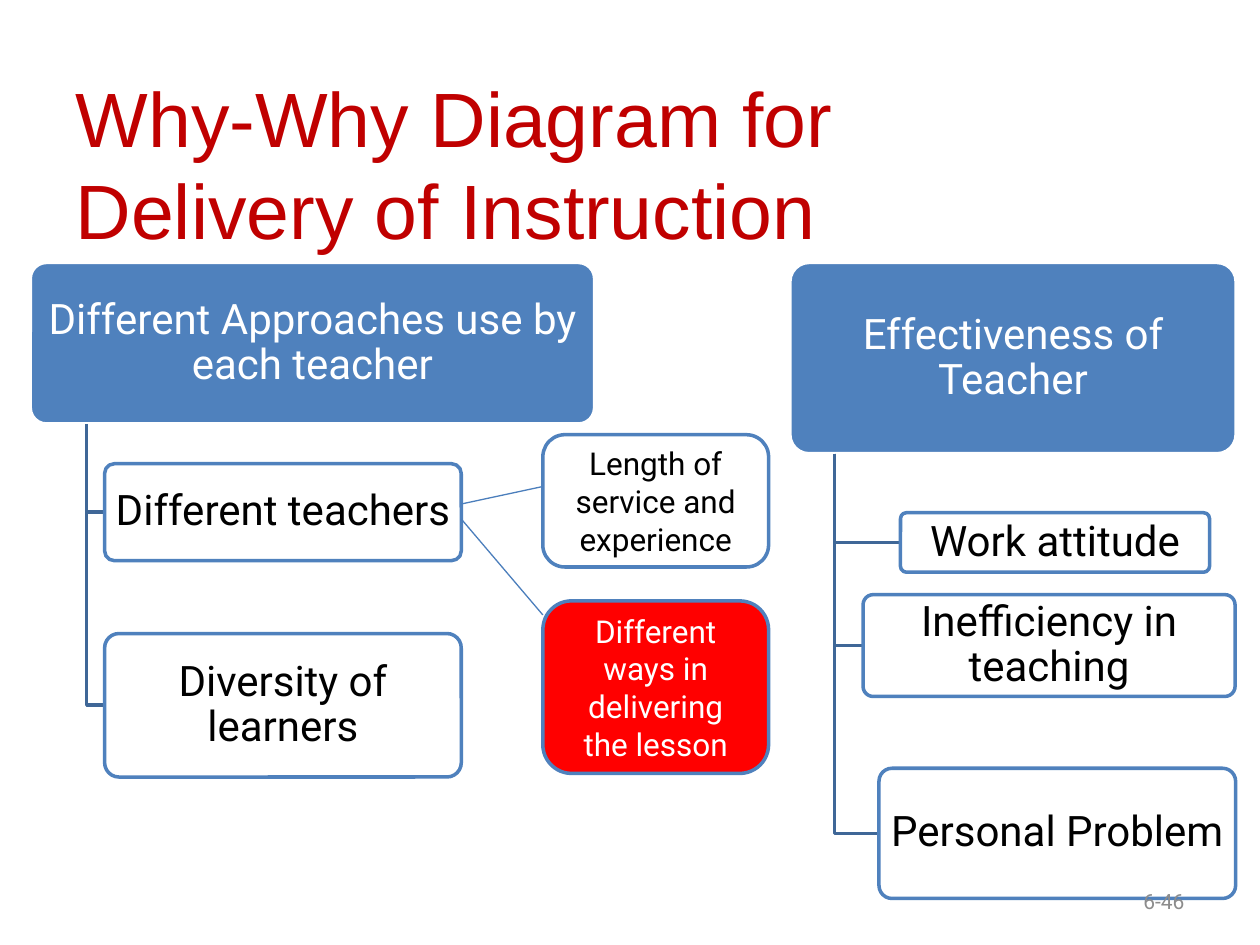
from pptx import Presentation
from pptx import util as u
from pptx.dml.color import RGBColor
from pptx.enum import shapes, text
from pptx.oxml.ns import qn
from lxml import etree

TITLE_RED, BLUE, BRANCH, LINK = "C00000", "4F81BD", "3F6797", "4B7EBC"
WHITE, BLACK, RED, GREY = "FFFFFF", "000000", "FF0000", "8C8C8C"


def color(target, value):
    """Set a font's, line's or fill's colour from a hex string."""
    if hasattr(target, "solid"):
        target.solid()
        target = target.fore_color
    else:
        target = target.color
    target.rgb = RGBColor.from_string(value)


class WhyDiagram:
    """Holds the diagram's style and the slide being drawn."""
    font = "Roboto"
    outline = u.Pt(2)

    def __init__(self, slide):
        self.slide = slide

    def set_words(self, frame, words, size, ink, align, font=None):
        frame.word_wrap = True
        frame.auto_size = text.MSO_AUTO_SIZE.NONE
        frame.vertical_anchor = text.MSO_ANCHOR.MIDDLE
        frame.text = words
        paragraph = frame.paragraphs[0]
        paragraph.alignment = align
        paragraph.font.name = font or self.font
        paragraph.font.size = u.Pt(size)
        color(paragraph.font, ink)

    def title(self, words, left, top, width, height):
        heading = self.slide.shapes.title
        heading.left, heading.top = u.Pt(left), u.Pt(top)
        heading.width, heading.height = u.Pt(width), u.Pt(height)
        self.set_words(heading.text_frame, words, 44, TITLE_RED, text.PP_ALIGN.LEFT, "Arial")

    def page_number(self, words, *bounds):
        label = self.slide.shapes.add_textbox(*map(u.Pt, bounds))
        self.set_words(label.text_frame, words, 12, GREY, text.PP_ALIGN.RIGHT)

    def box(self, words, bounds, fill, ink, border=BLUE, size=18):
        card = self.slide.shapes.add_shape(
            shapes.MSO_SHAPE.ROUNDED_RECTANGLE, *map(u.Pt, bounds))
        card.shadow.inherit = False
        color(card.fill, fill)
        color(card.line, border)
        card.line.width = self.outline
        self.set_words(card.text_frame, words, size, ink, text.PP_ALIGN.CENTER)
        return card

    def node(self, words, bounds, fill=WHITE, ink=BLACK, border=BLUE):
        """Draw a tree box: tighter corners, insets and line spacing."""
        card = self.box(words, bounds, fill, ink, border, size=24)
        card.adjustments[0] = 0.1
        frame = card.text_frame
        frame.margin_left = frame.margin_right = u.Pt(3.6)
        frame.margin_top = frame.margin_bottom = u.Pt(2.4)
        frame.paragraphs[0].line_spacing = 0.9

    def elbow(self, trunk, top, end, middle):
        pen = self.slide.shapes.build_freeform(u.Pt(trunk), u.Pt(top))
        pen.add_line_segments(
            [(u.Pt(trunk), u.Pt(middle)), (u.Pt(end), u.Pt(middle))], close=False)
        branch = pen.convert_to_shape()
        branch.shadow.inherit = False
        branch.fill.background()
        color(branch.line, BRANCH)
        branch.line.width = self.outline

    def tree(self, problem, bounds, causes):
        """Draw a problem with its causes hanging from a trunk below it."""
        left, top, width, height = bounds
        self.node(problem, bounds, BLUE, WHITE, WHITE)
        for cause, place in causes:
            x, y, _, tall = place
            self.elbow(left + width / 10, top + height, x, y + tall / 2)
            self.node(cause, place)

    def link(self, *ends):
        line = self.slide.shapes.add_connector(
            shapes.MSO_CONNECTOR.STRAIGHT, *map(u.Pt, ends))
        color(line.line, LINK)
        line.line.width = u.Pt(0.75)
        etree.SubElement(line._element.spPr, qn("a:effectLst"))


def main():
    deck = Presentation()
    deck.slide_width, deck.slide_height = u.Pt(720), u.Pt(540)
    diagram = WhyDiagram(deck.slides.add_slide(deck.slide_layouts[5]))

    diagram.title("Why-Why Diagram for Delivery of Instruction", 36, 48, 546, 90)
    diagram.tree("Different Approaches use by each teacher", (17.3, 150, 322.5, 92.3), [
        ("Different teachers", (59.8, 265, 203.8, 55.4)),
        ("Diversity of learners", (59.8, 362, 203.8, 82)),
    ])
    diagram.tree("Effectiveness of Teacher", (451.4, 150, 255, 109.3), [
        ("Work attitude", (514.6, 293, 176.6, 34)),
        ("Inefficiency in teaching", (493.2, 339.8, 212.6, 58.2)),
        ("Personal Problem", (502.3, 439, 203.8, 74.4)),
    ])

    reason_left, reason_width, teachers_right = 310.2, 129, 263.6
    reasons = [
        ("Length of service and experience", 248.4, 75.6, WHITE, BLACK, 288, 278),
        ("Different ways in delivering the lesson", 343.4, 98.6, RED, WHITE, 296.6, 351.4),
    ]
    for words, top, height, fill, ink, start, end in reasons:
        diagram.link(teachers_right, start, reason_left, end)
        diagram.box(words, (reason_left, top, reason_width, height), fill, ink)

    diagram.page_number("6-46", 516, 500.5, 168, 28.8)
    deck.save("out.pptx")


if __name__ == "__main__":
    main()
